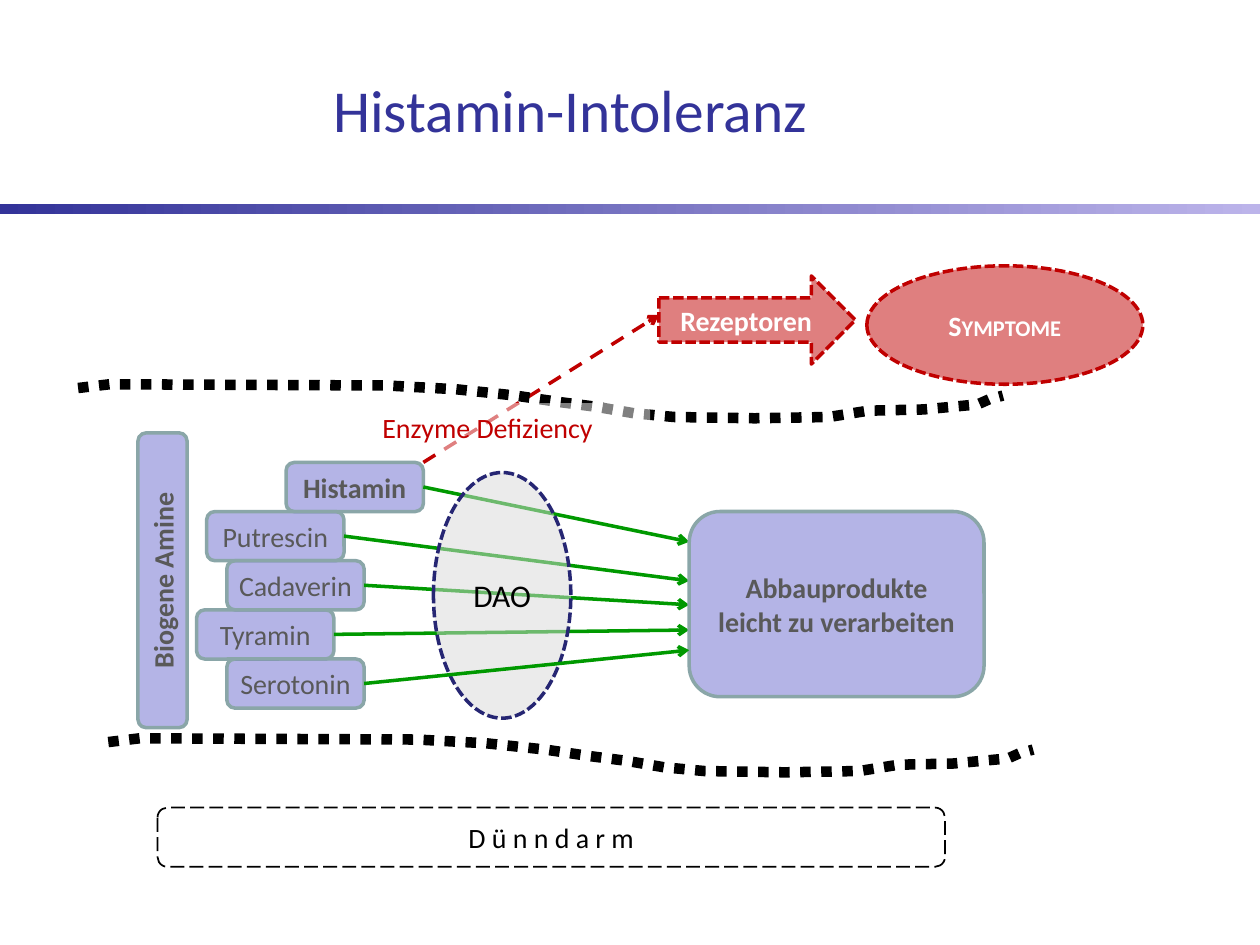
from lxml import etree
from pptx import Presentation
from pptx.dml.color import RGBColor
from pptx.enum import dml, shapes, text
from pptx.oxml import ns
from pptx.util import Inches, Pt

WHITE = RGBColor(0xFF, 0xFF, 0xFF)
BLACK = RGBColor(0, 0, 0)
BLUE = RGBColor(0x33, 0x33, 0x99)
LILAC = RGBColor(0xBC, 0xB4, 0xEA)
NAVY = RGBColor(0x26, 0x26, 0x73)
VIOLET = RGBColor(0x6B, 0x6B, 0xCF)
TEAL = RGBColor(0x8A, 0xA6, 0xA8)
GRAY = RGBColor(0x59, 0x59, 0x59)
SILVER = RGBColor(0xD9, 0xD9, 0xD9)
RED = RGBColor(0xC0, 0, 0)
GREEN = RGBColor(0, 0x99, 0)
FONT = "Calibri"
KIND = shapes.MSO_SHAPE
DASH = dml.MSO_LINE

AMINES = [
    ("Histamin", 2.27, 4.3, True),
    ("Putrescin", 1.64, 4.61, False),
    ("Cadaverin", 1.8, 4.8, False),
    ("Tyramin", 1.56, 5, False),
    ("Serotonin", 1.8, 5.16, False),
]
AMINE_TOP, AMINE_WIDTH, AMINE_HEIGHT = 3.67, 1.09, 0.39
PRODUCTS_LEFT = 5.47

WALL = [
    (0, 0.03), (0.25, 0), (2.45, 0.01), (3, 0.04), (3.47, 0.09), (3.81, 0.14),
    (4.12, 0.18), (4.41, 0.23), (4.73, 0.26), (5.37, 0.27), (5.96, 0.26),
    (6.27, 0.21), (6.71, 0.2), (7.14, 0.16), (7.23, 0.12), (7.34, 0.09),
]
WALL_STARTS = [(0.62, 3.05), (0.86, 5.86)]

deck = Presentation()
deck.slide_width, deck.slide_height = Inches(10), Inches(7.5)
page = deck.slides.add_slide(deck.slide_layouts[5])


def place(left, top, width, height):
    return [Inches(value) for value in (left, top, width, height)]


def write(shape, wording, size, color, bold=False, small_caps=False):
    frame = shape.text_frame
    frame.text = wording
    frame.word_wrap = True
    frame.vertical_anchor = text.MSO_ANCHOR.MIDDLE
    frame.margin_left = frame.margin_right = frame.margin_top = frame.margin_bottom = 0
    for para in frame.paragraphs:
        para.alignment = text.PP_ALIGN.CENTER
        for span in para.runs:
            span.font.name, span.font.size = FONT, Pt(size)
            span.font.bold, span.font.color.rgb = bold, color
            if small_caps:
                span.font._element.set("cap", "small")


def add_box(kind, area, fill=None, line=None, width=2, dash=None):
    box = page.shapes.add_shape(kind, *place(*area))
    box.shadow.inherit = False
    if fill is None:
        box.fill.background()
    else:
        box.fill.solid()
        box.fill.fore_color.rgb = fill
        color = box._element.spPr.find(".//" + ns.qn("a:srgbClr"))
        etree.SubElement(color, ns.qn("a:alpha"), val="50000")
    if line is None:
        box.line.fill.background()
    else:
        box.line.color.rgb, box.line.width = line, Pt(width)
        if dash:
            box.line.dash_style = dash
    return box


def add_arrow(start, end, color, dash=None, source=None):
    points = [Inches(value) for value in (*start, *end)]
    arrow = page.shapes.add_connector(shapes.MSO_CONNECTOR.STRAIGHT, *points)
    if source is not None:
        arrow.begin_connect(source, 3)
    arrow.line.color.rgb, arrow.line.width = color, Pt(2)
    if dash:
        arrow.line.dash_style = dash
    etree.SubElement(arrow.line._get_or_add_ln(), ns.qn("a:tailEnd"), type="arrow")
    etree.SubElement(arrow._element.spPr, ns.qn("a:effectLst"))


def add_wall(left, top):
    points = [(Inches(left + x), Inches(top + y)) for x, y in WALL]
    builder = page.shapes.build_freeform(*points[0])
    builder.add_line_segments(points[1:], close=False)
    wall = builder.convert_to_shape()
    wall.shadow.inherit = False
    wall.fill.background()
    wall.line.color.rgb, wall.line.width = BLACK, Pt(6)
    wall.line.dash_style = DASH.ROUND_DOT


def add_amine(row, name, left, bold):
    area = (left, AMINE_TOP + row * AMINE_HEIGHT, AMINE_WIDTH, AMINE_HEIGHT)
    box = add_box(KIND.ROUNDED_RECTANGLE, area, VIOLET, TEAL)
    write(box, name, 16, GRAY, bold)
    return box


def add_flow(row, box):
    name, left, target, bold = AMINES[row]
    start = (left + AMINE_WIDTH, AMINE_TOP + (row + 0.5) * AMINE_HEIGHT)
    add_arrow(start, (PRODUCTS_LEFT, target), GREEN, source=box)


title = page.shapes.title
title.left, title.top, title.width, title.height = place(0.23, 0.47, 8.59, 0.79)
write(title, "Histamin-Intoleranz", 34, BLUE)

rule = add_box(KIND.RECTANGLE, (0, 1.62, 10, 0.08))
rule.fill.gradient()
rule.fill.gradient_angle = 0
for stop, color in zip(rule.fill.gradient_stops, (BLUE, LILAC)):
    stop.color.rgb = color

add_arrow((3.36, 3.67), (5.23, 2.5), RED, DASH.DASH)
for start in WALL_STARTS:
    add_wall(*start)

bowel = add_box(KIND.ROUNDED_RECTANGLE, (1.25, 6.41, 6.25, 0.47), None, BLACK, 1, DASH.LONG_DASH)
write(bowel, "D ü n n d a r m", 16, BLACK)

receptors = add_box(KIND.RIGHT_ARROW, (5.23, 2.19, 1.56, 0.7), RED, RED, dash=DASH.SQUARE_DOT)
write(receptors, "Rezeptoren", 16, WHITE, bold=True)

amine_boxes = [add_amine(row, name, left, bold)
               for row, (name, left, target, bold) in enumerate(AMINES)]
for row, box in enumerate(amine_boxes[:-1]):
    add_flow(row, box)

enzyme = add_box(KIND.OVAL, (3.44, 3.75, 1.09, 1.95), SILVER, NAVY, dash=DASH.SQUARE_DOT)
write(enzyme, "DAO", 18, BLACK)

group_label = add_box(KIND.ROUNDED_RECTANGLE, (0.12, 4.41, 2.34, 0.39), VIOLET, TEAL)
group_label.rotation = 270
write(group_label, "Biogene Amine", 16, GRAY, bold=True)

products = add_box(KIND.ROUNDED_RECTANGLE, (PRODUCTS_LEFT, 4.06, 2.34, 1.47), VIOLET, TEAL)
write(products, "Abbauprodukte\vleicht zu verarbeiten", 16, GRAY, bold=True)

add_flow(len(AMINES) - 1, amine_boxes[-1])

deficiency = add_box(KIND.ROUNDED_RECTANGLE, (2.58, 3.2, 2.58, 0.39), WHITE)
write(deficiency, "Enzyme Defiziency", 16, RED)

symptoms = add_box(KIND.OVAL, (6.88, 2.11, 2.19, 0.94), RED, RED, dash=DASH.SQUARE_DOT)
write(symptoms, "Symptome", 16, WHITE, bold=True, small_caps=True)

deck.save("out.pptx")
